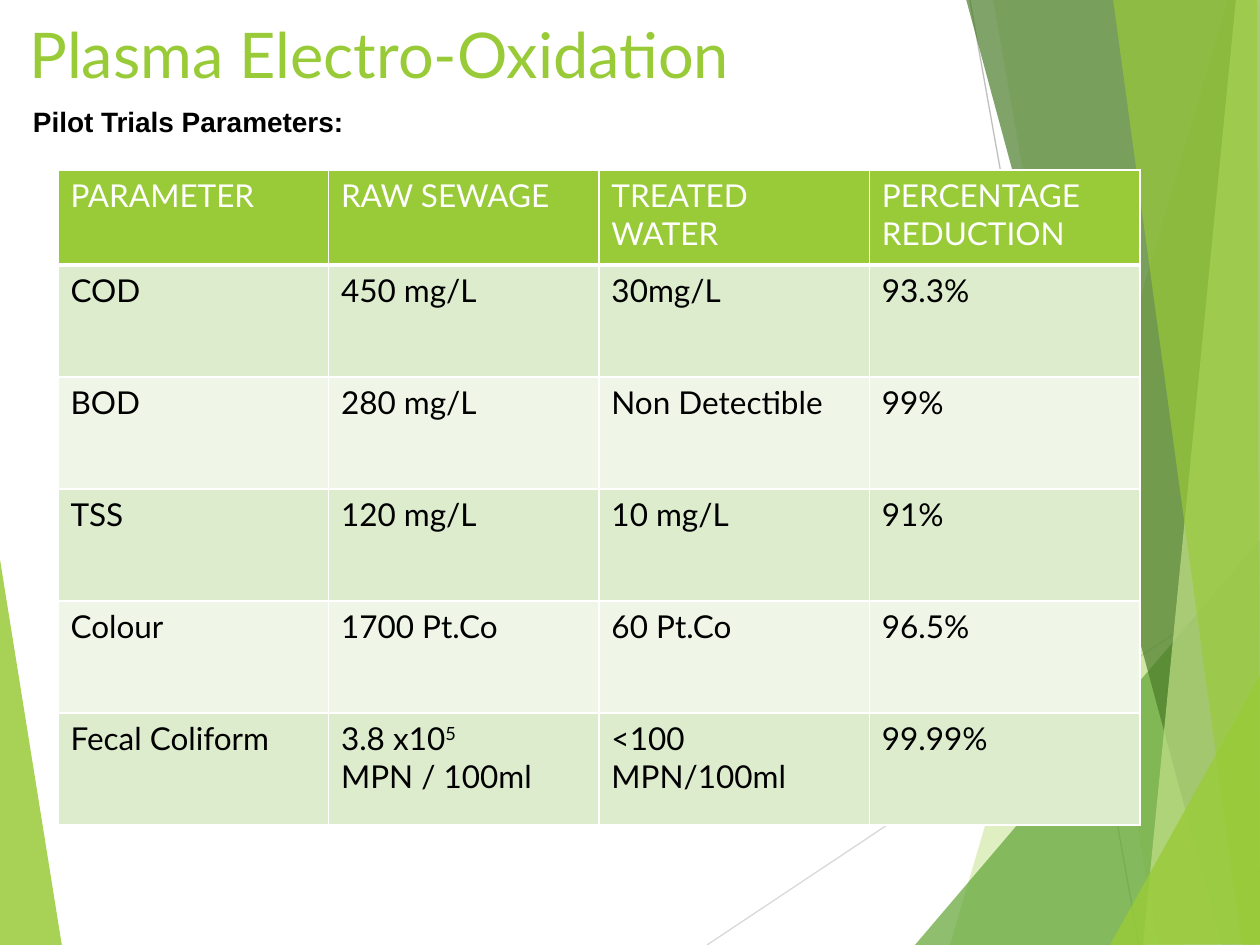
"""Build the slide on plasma electro-oxidation pilot trials."""
import pptx
import pptx.dml.color
import pptx.enum.shapes
import pptx.enum.text
import pptx.oxml
import pptx.oxml.ns
import pptx.util

RGB = pptx.dml.color.RGBColor
WHITE = RGB(0xFF, 0xFF, 0xFF)
BLACK = RGB(0, 0, 0)
LIME = RGB(0x99, 0xCB, 0x38)
GREEN = RGB(0x63, 0xA5, 0x37)
MOSS = RGB(0x4A, 0x7C, 0x29)
PALE = RGB(0xC2, 0xE0, 0x88)
BANDS = [RGB(0xDE, 0xEC, 0xCE), RGB(0xEF, 0xF6, 0xE8)]
SILVER = RGB(0xD9, 0xD9, 0xD9)
GREY = RGB(0xBF, 0xBF, 0xBF)

SCALE = 914400 / 126
WIDE, HIGH = 1260, 945

LINES = [
    ((707, 945), (1261, 576), SILVER),
    ((970, 0), (1139, 945), GREY),
]
EDGE = [(-1, 553), (62, 946), (-1, 945)]
FACETS = [
    ([(1228, 0), (950, 945), (1262, 946), (1261, 1)], LIME, 30),
    ([(993, -1), (1158, 945), (1261, 945), (1261, -1)], LIME, 20),
    ([(915, 945), (1260, 540), (1261, 945)], GREEN, 72),
    ([(966, -1), (1222, 945), (1261, 944), (1261, -1)], MOSS, 70),
    ([(1236, -1), (1143, 945), (1261, 945), (1260, -1)], PALE, 70),
    ([(1113, -1), (1242, 945), (1260, 945), (1257, -1)], LIME, 65),
    ([(1110, 945), (1261, 674), (1261, 944)], LIME, 80),
]
ROWS = [
    ["PARAMETER", "RAW SEWAGE", "TREATED WATER", "PERCENTAGE REDUCTION"],
    ["COD", "450 mg/L", "30mg/L", "93.3%"],
    ["BOD", "280 mg/L", "Non Detectible", "99%"],
    ["TSS", "120 mg/L", "10 mg/L", "91%"],
    ["Colour", "1700 Pt.Co", "60 Pt.Co", "96.5%"],
    ["Fecal Coliform", "3.8 x10^5\nMPN / 100ml", "<100 MPN/100ml", "99.99%"],
]


def px(num):
    """Turn px into EMU."""
    return pptx.util.Emu(round(num * SCALE))


def add_line(slide, start, end, color):
    """Draw a thin straight line."""
    kind = pptx.enum.shapes.MSO_CONNECTOR.STRAIGHT
    line = slide.shapes.add_connector(kind, *map(px, start + end))
    line.line.color.rgb = color
    line.line.width = pptx.util.Pt(0.75)
    props = line._element.spPr
    props.append(pptx.oxml.parse_xml(
        f"<a:effectLst {pptx.oxml.ns.nsdecls('a')}/>"))


def add_facet(slide, points, color, alpha):
    """Draw a see-through polygon; alpha is its opacity in percent."""
    pen = slide.shapes.build_freeform(*points[0], scale=SCALE)
    pen.add_line_segments(points[1:], close=True)
    shape = pen.convert_to_shape()
    shape.shadow.inherit = False
    shape.line.fill.background()
    shape.fill.solid()
    shape.fill.fore_color.rgb = color
    tint = shape._element.spPr.find(".//" + pptx.oxml.ns.qn("a:srgbClr"))
    tint.append(pptx.oxml.parse_xml(
        f"<a:alpha {pptx.oxml.ns.nsdecls('a')} val='{alpha * 1000}'/>"))


def style(para, face, size, color, bold=False):
    """Set the font of each run in a paragraph."""
    for run in para.runs:
        font = run.font
        font.name, font.size, font.bold = face, pptx.util.Pt(size), bold
        font.color.rgb = color


def add_text(slide, box, text, *look):
    """Add a wrapped text box and return its frame."""
    frame = slide.shapes.add_textbox(*map(px, box)).text_frame
    frame.word_wrap = True
    frame.text = text
    style(frame.paragraphs[0], *look)
    return frame


def add_edges(cell, base):
    """Give a cell white borders, the bottom one base points wide."""
    props = cell._tc.get_or_add_tcPr()
    for side, width in zip("LRTB", (1, 1, 1, base)):
        props.append(pptx.oxml.parse_xml(
            f"<a:ln{side} {pptx.oxml.ns.nsdecls('a')} w='{width * 12700}'>"
            f"<a:solidFill><a:srgbClr val='{WHITE}'/></a:solidFill>"
            f"</a:ln{side}>"))


def fill_cell(cell, text, fill, color, base):
    """Write a cell; a caret marks a raised ending."""
    add_edges(cell, base)
    cell.fill.solid()
    cell.fill.fore_color.rgb = fill
    cell.text_frame.text = text
    for para in cell.text_frame.paragraphs:
        stem, mark, power = para.text.partition("^")
        if mark:
            para.text = stem
            run = para.add_run()
            run.text = power
            run._r.get_or_add_rPr().set("baseline", "30000")
        style(para, "Lato", 18, color)


def add_grid(slide, left, top, width, head, step):
    """Add the table of trial results."""
    count = len(ROWS[0])
    high = head + step * (len(ROWS) - 1)
    table = slide.shapes.add_table(
        len(ROWS), count, *map(px, (left, top, width, high))).table
    for col in table.columns:
        col.width = px(width / count)
    for i, texts in enumerate(ROWS):
        table.rows[i].height = px(step if i else head)
        look = (BANDS[(i - 1) % 2], BLACK, 1) if i else (LIME, WHITE, 3)
        for j, text in enumerate(texts):
            fill_cell(table.cell(i, j), text, *look)


def main():
    """Build and save the slide."""
    deck = pptx.Presentation()
    deck.slide_width, deck.slide_height = px(WIDE), px(HIGH)
    slide = deck.slides.add_slide(deck.slide_layouts[6])
    add_facet(slide, EDGE, LIME, 85)
    for line in LINES:
        add_line(slide, *line)
    for facet in FACETS:
        add_facet(slide, *facet)
    add_grid(slide, 58, 170, 1082, 95, 112)
    add_text(slide, (17, 9, 989, 181), "Plasma Electro-Oxidation",
             "Lato", 36, LIME)
    frame = add_text(slide, (24, 100, 964, 43), "Pilot Trials Parameters:",
                     "Arial", 16, BLACK, True)
    frame.margin_left = frame.margin_right = px(9)
    frame.margin_top = frame.margin_bottom = px(5)
    frame.paragraphs[0].alignment = pptx.enum.text.PP_ALIGN.JUSTIFY
    deck.save("out.pptx")


if __name__ == "__main__":
    main()
